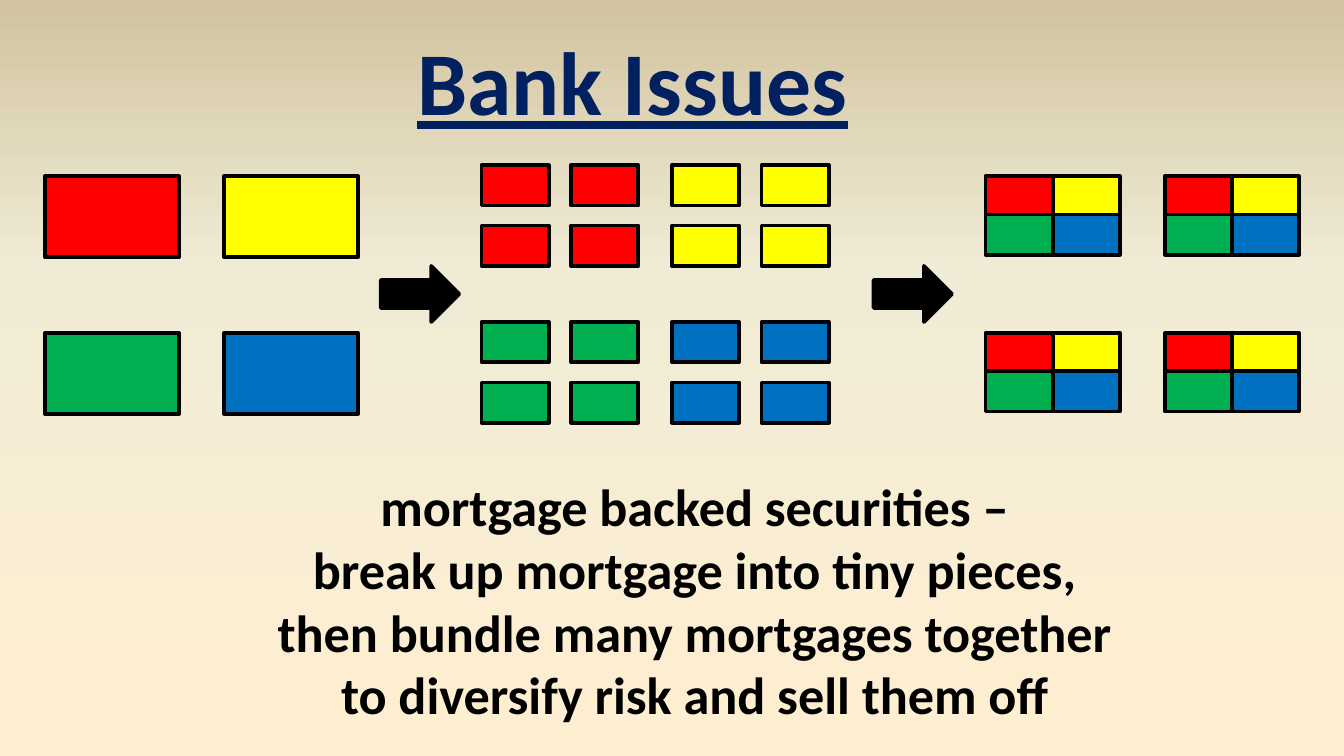
import copy
import dataclasses
import itertools

import pptx
import pptx.dml.color
import pptx.enum.shapes
import pptx.enum.text
import pptx.oxml.ns
import pptx.util

EMU_PER_PX = 3810


@dataclasses.dataclass(frozen=True)
class Theme:
    font: str = "Calibri"
    title_size: int = 48
    body_size: int = 28
    outline_width: int = 2
    title: str = "002060"
    ink: str = "000000"
    mortgages: tuple = ("FF0000", "FFFF00", "00B050", "0070C0")
    background: tuple = ((0, "FFEFD1"), (0.65, "F0EBD5"), (1, "D1C39F"))


THEME = Theme()
EXPLANATION = (
    "mortgage backed securities –",
    "break up mortgage into tiny pieces,",
    "then bundle many mortgages together",
    "to diversify risk and sell them off",
)


def px(length):
    return pptx.util.Emu(length * EMU_PER_PX)


def rgb(color):
    return pptx.dml.color.RGBColor.from_string(color)


def paint_background(slide):
    fill = slide.background.fill
    fill.gradient()
    fill.gradient_angle = 90
    stops = slide.element.find(".//" + pptx.oxml.ns.qn("a:gsLst"))
    stops.append(copy.deepcopy(stops[-1]))
    for stop, (position, color) in zip(fill.gradient_stops, THEME.background):
        stop.position = position
        stop.color.rgb = rgb(color)


def write_text(box, lines, place, size, color, underline=False, wrap=True):
    box.left, box.top, box.width, box.height = map(px, place)
    frame = box.text_frame
    frame.text = "\n".join(lines)
    frame.word_wrap = wrap
    frame.auto_size = pptx.enum.text.MSO_AUTO_SIZE.SHAPE_TO_FIT_TEXT
    frame.vertical_anchor = pptx.enum.text.MSO_ANCHOR.TOP
    for para in frame.paragraphs:
        para.alignment = pptx.enum.text.PP_ALIGN.CENTER
        para.space_before = pptx.util.Pt(0)
        properties = para._p.get_or_add_pPr()
        properties.set("marL", "0")
        properties.set("indent", "0")
        properties.append(pptx.oxml.parse_xml(
            f"<a:buNone {pptx.oxml.ns.nsdecls('a')}/>"))
        for span in para.runs:
            span.font.name = THEME.font
            span.font.size = pptx.util.Pt(size)
            span.font.bold = True
            span.font.underline = underline
            span.font.color.rgb = rgb(color)


def add_block(shapes, kind, place, color):
    block = shapes.add_shape(kind, *map(px, place))
    block.shadow.inherit = False
    block.fill.solid()
    block.fill.fore_color.rgb = rgb(color)
    block.line.color.rgb = rgb(THEME.ink)
    block.line.width = pptx.util.Pt(THEME.outline_width)


def grid(left, top, pitch_x, pitch_y):
    return [(left + column * pitch_x, top + row * pitch_y)
            for row, column in itertools.product(range(2), repeat=2)]


def add_four(shapes, corners, size, colors):
    for corner, color in zip(corners, colors):
        add_block(shapes, pptx.enum.shapes.MSO_SHAPE.RECTANGLE,
                  (*corner, *size), color)


def add_whole_mortgages(slide):
    add_four(slide.shapes, grid(80, 315, 320, 280), (240, 144), THEME.mortgages)


def add_split_mortgages(slide):
    group = slide.shapes.add_group_shape()
    for corner, color in zip(grid(860, 295, 340, 280), THEME.mortgages):
        add_four(group.shapes, grid(*corner, 160, 108), (120, 72), [color] * 4)


def add_bundles(slide):
    group = slide.shapes.add_group_shape()
    for corner in grid(1760, 315, 320, 280):
        add_four(group.shapes, grid(*corner, 120, 68), (120, 72), THEME.mortgages)


def add_arrows(slide):
    for left in (680, 1560):
        add_block(slide.shapes, pptx.enum.shapes.MSO_SHAPE.RIGHT_ARROW,
                  (left, 475, 140, 100), THEME.ink)


def main():
    deck = pptx.Presentation()
    deck.slide_width, deck.slide_height = px(2400), px(1350)
    slide = deck.slides.add_slide(deck.slide_layouts[1])
    paint_background(slide)
    write_text(slide.shapes.title, ["Bank Issues"], (718, 35, 823, 218),
               THEME.title_size, THEME.title, underline=True, wrap=False)
    write_text(slide.placeholders[1], EXPLANATION, (440, 835, 1600, 478),
               THEME.body_size, THEME.ink)
    add_whole_mortgages(slide)
    add_split_mortgages(slide)
    add_bundles(slide)
    add_arrows(slide)
    deck.save("out.pptx")


if __name__ == "__main__":
    main()
